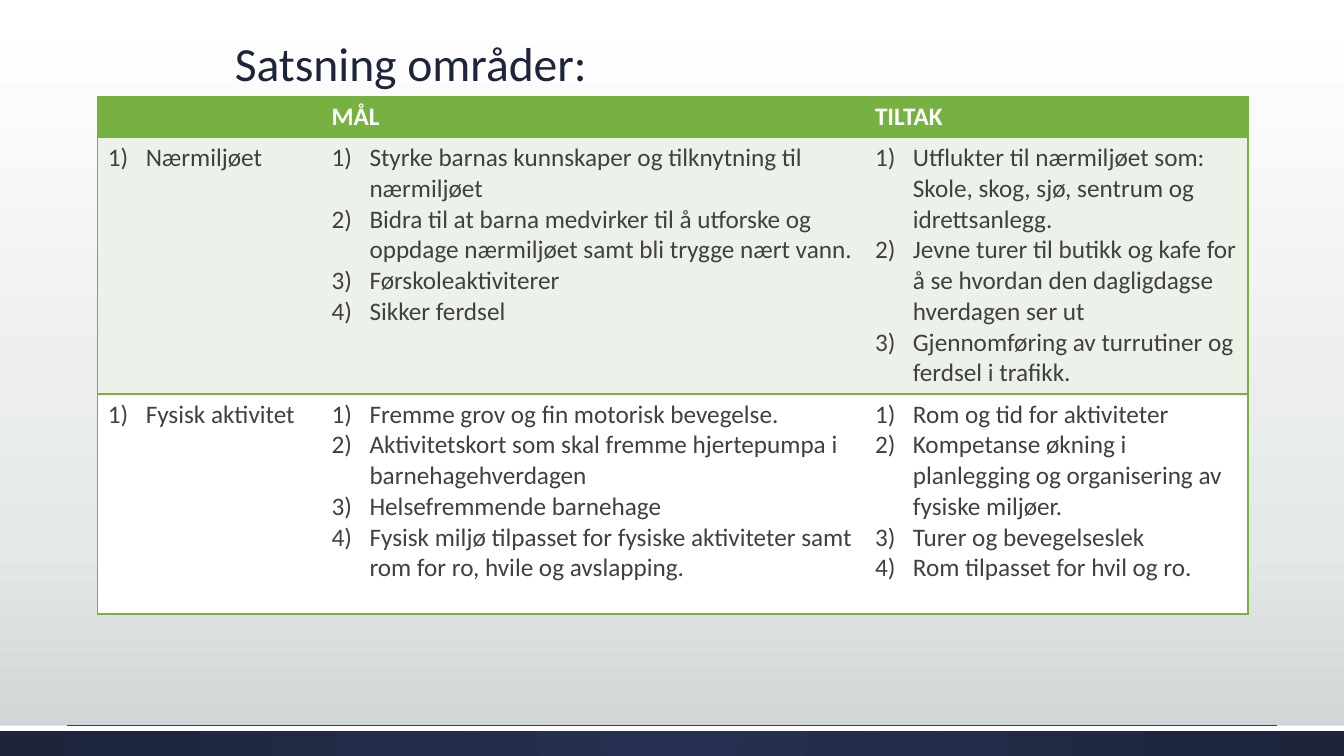
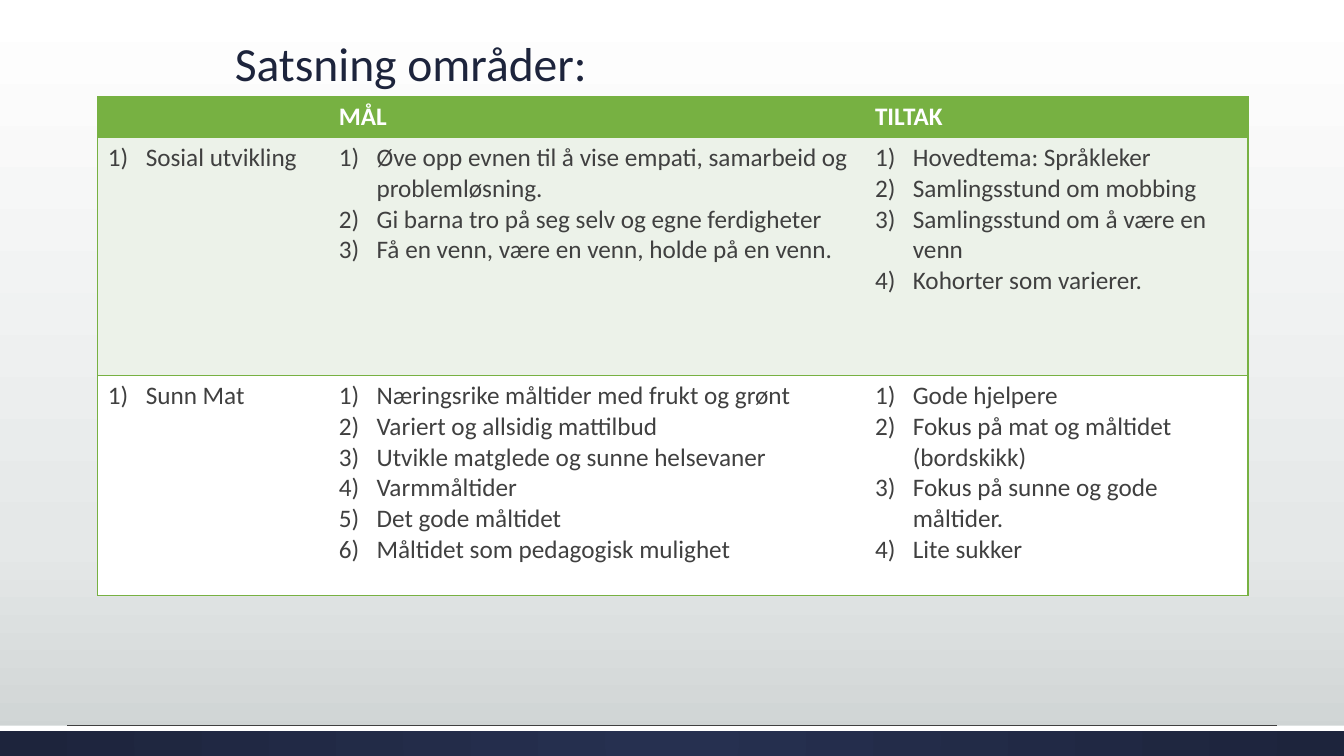
"""Build two slides of focus areas, each with a table of goals and measures."""
import pptx
import pptx.dml.color
import pptx.enum.shapes
import pptx.enum.text
import pptx.oxml
import pptx.oxml.ns
import pptx.util
from lxml import etree

WIDTH = pptx.util.Inches(13.33)
HEIGHT = pptx.util.Inches(7.5)
FONT = "Calibri"
COLOURS = {
    "navy": "1D243C", "navy_light": "263050", "green": "77B142", "pale_green": "ECF2E9",
    "white": "FFFFFF", "text": "404040", "mist": "E5E8E8", "grey": "CDD2D2",
}
PLAIN_TABLE = "{2D5ABB26-0587-4C30-8999-92F81FD0307C}"
HEADINGS = [[], ["MÅL"], ["TILTAK"]]
PAGES = [
    {
        "columns": [16.65, 40.43, 28.5],
        "rows": [5.4, 33.93, 29.1],
        "areas": [
            [
                ["Nærmiljøet"],
                ["Styrke barnas kunnskaper og tilknytning til nærmiljøet",
                 "Bidra til at barna medvirker til å utforske og oppdage nærmiljøet "
                 "samt bli trygge nært vann.",
                 "Førskoleaktiviterer",
                 "Sikker ferdsel"],
                ["Utflukter til nærmiljøet som: Skole, skog, sjø, sentrum og idrettsanlegg.",
                 "Jevne turer til butikk og kafe for å se hvordan den dagligdagse "
                 "hverdagen ser ut",
                 "Gjennomføring av turrutiner og ferdsel i trafikk."],
            ],
            [
                ["Fysisk aktivitet"],
                ["Fremme grov og fin motorisk bevegelse.",
                 "Aktivitetskort som skal fremme hjertepumpa i barnehagehverdagen",
                 "Helsefremmende barnehage",
                 "Fysisk miljø tilpasset for fysiske aktiviteter samt rom for ro, "
                 "hvile og avslapping."],
                ["Rom og tid for aktiviteter",
                 "Kompetanse økning i planlegging og organisering av fysiske miljøer.",
                 "Turer og bevegelseslek",
                 "Rom tilpasset for hvil og ro."],
            ],
        ],
    },
    {
        "columns": [17.18, 39.9, 28.5],
        "rows": [5.4, 31.5, 29.1],
        "areas": [
            [
                ["Sosial utvikling"],
                ["Øve opp evnen til å vise empati, samarbeid og problemløsning.",
                 "Gi barna tro på seg selv og egne ferdigheter",
                 "Få en venn, være en venn, holde på en venn."],
                ["Hovedtema: Språkleker",
                 "Samlingsstund om mobbing",
                 "Samlingsstund om å være en venn",
                 "Kohorter som varierer."],
            ],
            [
                ["Sunn Mat"],
                ["Næringsrike måltider med frukt og grønt",
                 "Variert og allsidig mattilbud",
                 "Utvikle matglede og sunne helsevaner",
                 "Varmmåltider",
                 "Det gode måltidet",
                 "Måltidet som pedagogisk mulighet"],
                ["Gode hjelpere",
                 "Fokus på mat og måltidet (bordskikk)",
                 "Fokus på sunne og gode måltider.",
                 "Lite sukker"],
            ],
        ],
    },
]


def across(percent):
    """Return a share of the slide's width."""
    return round(WIDTH * percent / 100)


def down(percent):
    """Return a share of the slide's height."""
    return round(HEIGHT * percent / 100)


def place(left, top, width, height):
    """Return a frame given in percent of the slide."""
    return across(left), down(top), across(width), down(height)


def colour(name):
    """Return a named colour."""
    return pptx.dml.color.RGBColor.from_string(COLOURS[name])


def add_child(parent, tag, **attributes):
    """Append a drawing element and return it."""
    child = etree.SubElement(parent, pptx.oxml.ns.qn(tag))
    for name, value in attributes.items():
        child.set(name, str(value))
    return child


def set_solid(fill, name):
    """Fill with one named colour."""
    fill.solid()
    fill.fore_color.rgb = colour(name)


def set_gradient(fill, owner, stops, angle=None):
    """Fill with a linear gradient, or a circular one when no angle is given."""
    fill.gradient()
    gradient = next(owner.iter(pptx.oxml.ns.qn("a:gradFill")))
    for child in list(gradient):
        gradient.remove(child)
    stop_list = add_child(gradient, "a:gsLst")
    for percent, name in stops:
        stop = add_child(stop_list, "a:gs", pos=percent * 1000)
        add_child(stop, "a:srgbClr", val=COLOURS[name])
    if angle is None:
        circle = add_child(gradient, "a:path", path="circle")
        add_child(circle, "a:fillToRect", l=50000, t=50000, r=50000, b=50000)
    else:
        add_child(gradient, "a:lin", ang=angle * 60000, scaled=0)


def write(para, text, *, size=18, ink="text", bold=False, numbered=False):
    """Write one formatted paragraph."""
    span = para.add_run()
    span.text = text
    span.font.name = FONT
    span.font.size = pptx.util.Pt(size)
    span.font.bold = bold
    span.font.color.rgb = colour(ink)
    if numbered:
        properties = para._p.get_or_add_pPr()
        indent = pptx.util.Inches(0.375)
        properties.set("marL", str(indent))
        properties.set("indent", str(-indent))
        add_child(properties, "a:buAutoNum", type="arabicParenR")


def add_band(page, top, height):
    """Add a full-width rectangle without outline."""
    band = page.shapes.add_shape(
        pptx.enum.shapes.MSO_SHAPE.RECTANGLE, *place(0, top, 100, height))
    band.shadow.inherit = False
    band.line.fill.background()
    return band


def add_backdrop(page):
    """Add the background, the footer band and its rule."""
    set_gradient(page.background.fill, page.element,
                 [(0, "white"), (72, "mist"), (100, "grey")], angle=90)
    footer = add_band(page, 96, 4)
    set_gradient(footer.fill, footer.element, [(0, "navy_light"), (100, "navy")])
    set_solid(add_band(page, 96, 0.67).fill, "white")
    rule = page.shapes.add_connector(
        pptx.enum.shapes.MSO_CONNECTOR.STRAIGHT,
        across(5), down(95.93), across(95), down(95.93))
    rule.line.color.rgb = colour("text")
    rule.line.width = pptx.util.Pt(0.75)
    add_child(rule.element.spPr, "a:effectLst")


def add_title(page, text):
    """Add the slide title."""
    box = page.shapes.add_textbox(*place(16.73, 4.13, 68.62, 8.67))
    box.text_frame.word_wrap = True
    box.text_frame.vertical_anchor = pptx.enum.text.MSO_ANCHOR.BOTTOM
    para = box.text_frame.paragraphs[0]
    para.line_spacing = 0.9
    write(para, text, size=34, ink="navy")


def set_borders(cell, sides):
    """Draw green lines on the given sides of a cell."""
    properties = cell._tc.get_or_add_tcPr()
    for index, side in enumerate(sides):
        line = add_child(properties, f"a:ln{side}", w=pptx.util.Pt(1))
        add_child(add_child(line, "a:solidFill"), "a:srgbClr", val=COLOURS["green"])
        properties.insert(index, line)


def fill_cell(cell, texts, fill, sides, **style):
    """Fill a cell with colour, borders and paragraphs."""
    set_solid(cell.fill, fill)
    set_borders(cell, sides)
    for index, text in enumerate(texts):
        frame = cell.text_frame
        para = frame.add_paragraph() if index else frame.paragraphs[0]
        write(para, text, **style)


def add_area_table(page, columns, rows, areas):
    """Add the table of areas, goals and measures."""
    frame = page.shapes.add_table(
        len(rows), len(columns), *place(7.28, 12.8, sum(columns), sum(rows)))
    table = frame.table
    table.first_row = table.horz_banding = False
    next(frame.element.iter(pptx.oxml.ns.qn("a:tableStyleId"))).text = PLAIN_TABLE
    for column, width in zip(table.columns, columns):
        column.width = across(width)
    for row, height in zip(table.rows, rows):
        row.height = down(height)
    heading = {"ink": "white", "bold": True}
    styles = [("green", heading), ("pale_green", {"numbered": True}),
              ("white", {"numbered": True})]
    edges = ["LTB", "TB", "RTB"]
    for row, contents, (fill, style) in zip(table.rows, [HEADINGS, *areas], styles):
        for cell, texts, sides in zip(row.cells, contents, edges):
            fill_cell(cell, texts, fill, sides, **style)


def main():
    """Build and save the deck."""
    deck = pptx.Presentation()
    deck.slide_width, deck.slide_height = WIDTH, HEIGHT
    for content in PAGES:
        page = deck.slides.add_slide(deck.slide_layouts[6])
        add_backdrop(page)
        add_title(page, "Satsning områder:")
        add_area_table(page, **content)
    deck.save("out.pptx")


if __name__ == "__main__":
    main()
